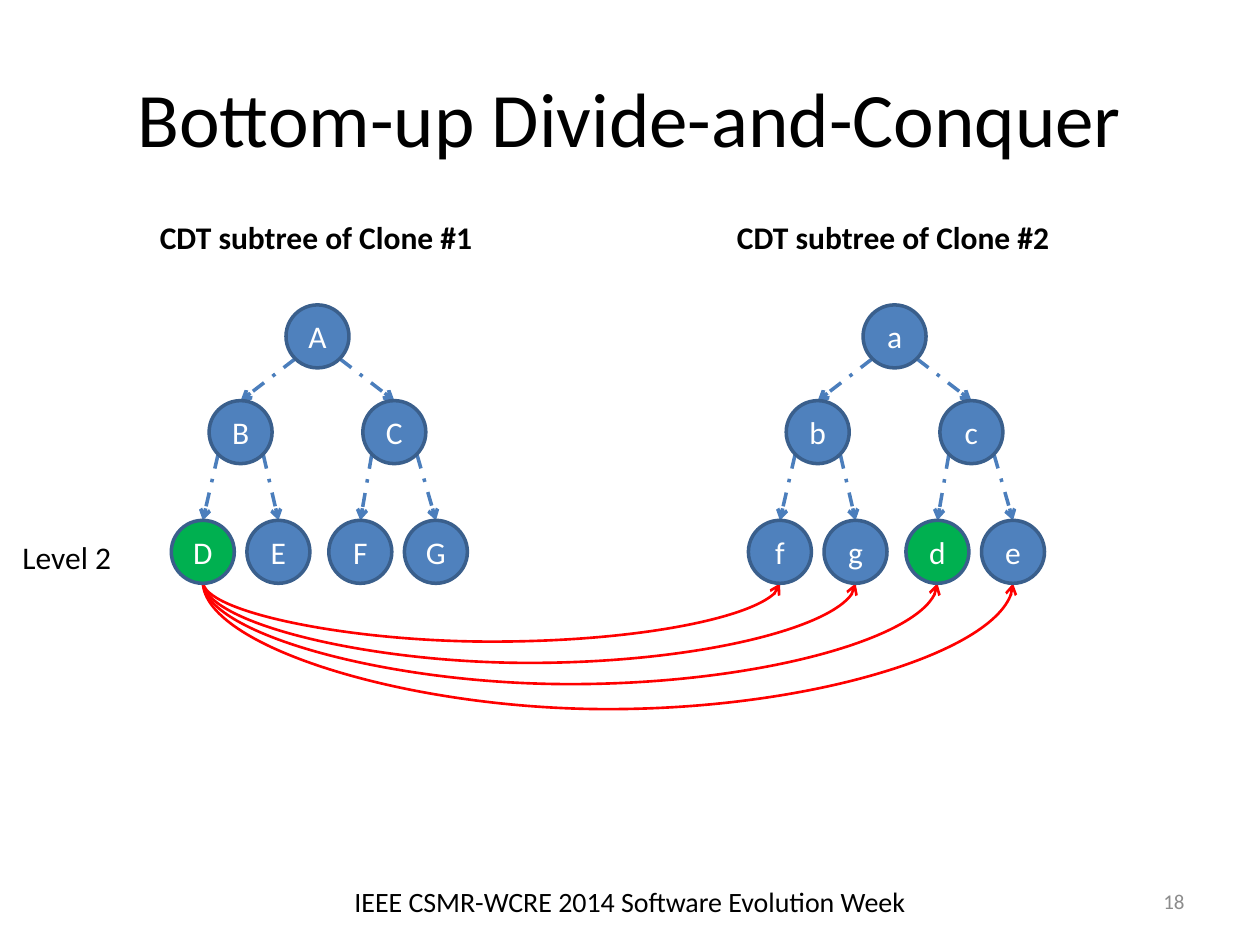
"""Build the slide on bottom-up divide-and-conquer matching of two subtrees."""
from dataclasses import dataclass

import lxml.etree
import pptx
import pptx.dml.color
import pptx.enum.dml
import pptx.enum.shapes
import pptx.enum.text
import pptx.oxml.ns
import pptx.util

PX = 9144
NODE = 50
CORNER = 18
TREE_SHIFT = 458
LEAF_TOP = 413
CURVE_DEPTH = 12700
FONT = "Calibri"
COLORS = {
    "black": "000000",
    "white": "FFFFFF",
    "node": "4F81BD",
    "outline": "3A5F8C",
    "edge": "4B7EBC",
    "match": "00B050",
    "compare": "FF0000",
    "number": "8C8C8C",
}
ALIGN = pptx.enum.text.PP_ALIGN
ANCHOR = pptx.enum.text.MSO_ANCHOR
qn = pptx.oxml.ns.qn


@dataclass(frozen=True)
class Label:
    text: str
    left: int
    top: int
    width: int
    height: int
    size: int = 18
    color: str = "black"
    bold: bool = False
    align: ALIGN = ALIGN.LEFT
    anchor: ANCHOR = ANCHOR.TOP
    wrap: bool = False


@dataclass(frozen=True)
class Spot:
    left: int
    top: int


@dataclass(frozen=True)
class Tree:
    title: str
    names: str
    match: str
    shift: int


SPOTS = [
    Spot(227, 242),
    Spot(166, 318),
    Spot(288, 318),
    Spot(136, LEAF_TOP),
    Spot(196, LEAF_TOP),
    Spot(261, LEAF_TOP),
    Spot(321, LEAF_TOP),
]
TREES = [
    Tree("CDT subtree of Clone #1", "ABCDEFG", "D", 0),
    Tree("CDT subtree of Clone #2", "abcfgde", "d", TREE_SHIFT),
]
LABELS = [
    Label("Bottom-up Divide-and-Conquer", 50, 30, 900, 125, 44,
          align=ALIGN.CENTER, anchor=ANCHOR.MIDDLE, wrap=True),
    Label("IEEE CSMR-WCRE 2014 Software Evolution Week", 0, 695, 1000, 40, 16,
          align=ALIGN.CENTER, anchor=ANCHOR.MIDDLE, wrap=True),
    Label("Level 2", 8, 422, 92, 40),
    Label("18", 717, 695, 233, 40, 12, "number",
          align=ALIGN.RIGHT, anchor=ANCHOR.MIDDLE, wrap=True),
]
CURVE_BOTTOMS = [511, 528, 545, 565]


def px(length: int) -> pptx.util.Emu:
    return pptx.util.Emu(length * PX)


def rgb(name: str) -> pptx.dml.color.RGBColor:
    return pptx.dml.color.RGBColor.from_string(COLORS[name])


def write(frame, text: str, size: int, color: str, bold: bool, align: ALIGN) -> None:
    para = frame.paragraphs[0]
    para.text = text
    para.alignment = align
    para.font.name = FONT
    para.font.size = pptx.util.Pt(size)
    para.font.bold = bold
    para.font.color.rgb = rgb(color)


def add_label(page, label: Label) -> None:
    box = page.shapes.add_textbox(
        px(label.left), px(label.top), px(label.width), px(label.height))
    box.text_frame.word_wrap = label.wrap
    box.text_frame.vertical_anchor = label.anchor
    write(box.text_frame, label.text, label.size, label.color, label.bold, label.align)


def add_node(page, name: str, left: int, top: int, fill: str) -> None:
    node = page.shapes.add_shape(
        pptx.enum.shapes.MSO_SHAPE.OVAL, px(left), px(top), px(NODE), px(NODE))
    node.shadow.inherit = False
    node.fill.solid()
    node.fill.fore_color.rgb = rgb(fill)
    node.line.color.rgb = rgb("outline")
    node.line.width = pptx.util.Pt(2)
    node.text_frame.vertical_anchor = ANCHOR.MIDDLE
    write(node.text_frame, name, 18, "white", False, ALIGN.CENTER)


def add_arrow(page, kind, start: tuple, end: tuple, color: str, width: float):
    arrow = page.shapes.add_connector(kind, *map(px, start + end))
    arrow.line.color.rgb = rgb(color)
    arrow.line.width = pptx.util.Pt(width)
    line = arrow.line._get_or_add_ln()
    lxml.etree.SubElement(line, qn("a:tailEnd"), type="arrow")
    lxml.etree.SubElement(arrow._element.spPr, qn("a:effectLst"))
    return arrow


def add_edge(page, parent: Spot, child: Spot, shift: int) -> None:
    middle = shift + NODE // 2
    side = CORNER if child.left > parent.left else -CORNER
    start = (parent.left + middle + side, parent.top + NODE // 2 + CORNER)
    edge = add_arrow(page, pptx.enum.shapes.MSO_CONNECTOR.STRAIGHT, start,
                     (child.left + middle, child.top), "edge", 2)
    edge.line.dash_style = pptx.enum.dml.MSO_LINE.DASH_DOT


def add_curve(page, start_x: int, end_x: int, top: int, bottom: int) -> None:
    curve = add_arrow(page, pptx.enum.shapes.MSO_CONNECTOR.CURVE,
                      (start_x, top), (end_x, top), "compare", 1.5)
    span = px(end_x - start_x)
    curve.left = px(start_x) + (span - CURVE_DEPTH) // 2
    curve.top = px(top) - (span + CURVE_DEPTH) // 2
    curve.width, curve.height = CURVE_DEPTH, span
    frame = curve._element.spPr.find(qn("a:xfrm"))
    frame.set("rot", "16200000")
    frame.set("flipH", "1")
    bend = px(bottom - top) * 100000 // CURVE_DEPTH
    guides = curve._element.spPr.find(qn("a:prstGeom")).find(qn("a:avLst"))
    lxml.etree.SubElement(guides, qn("a:gd"), name="adj1", fmla=f"val {bend}")


def add_tree(page, tree: Tree) -> None:
    add_label(page, Label(tree.title, 117 + tree.shift, 168, 270, 40, bold=True))
    for index, child in enumerate(SPOTS[1:]):
        add_edge(page, SPOTS[index // 2], child, tree.shift)
    for name, spot in zip(tree.names, SPOTS):
        fill = "match" if name == tree.match else "node"
        add_node(page, name, spot.left + tree.shift, spot.top, fill)


def main() -> None:
    deck = pptx.Presentation()
    deck.slide_width, deck.slide_height = px(1000), px(750)
    page = deck.slides.add_slide(deck.slide_layouts[6])
    for label in LABELS:
        add_label(page, label)
    leaves = [spot.left + NODE // 2 for spot in SPOTS[3:]]
    for leaf, bottom in zip(leaves, CURVE_BOTTOMS):
        add_curve(page, leaves[0], leaf + TREE_SHIFT, LEAF_TOP + NODE, bottom)
    for tree in TREES:
        add_tree(page, tree)
    deck.save("out.pptx")


if __name__ == "__main__":
    main()
